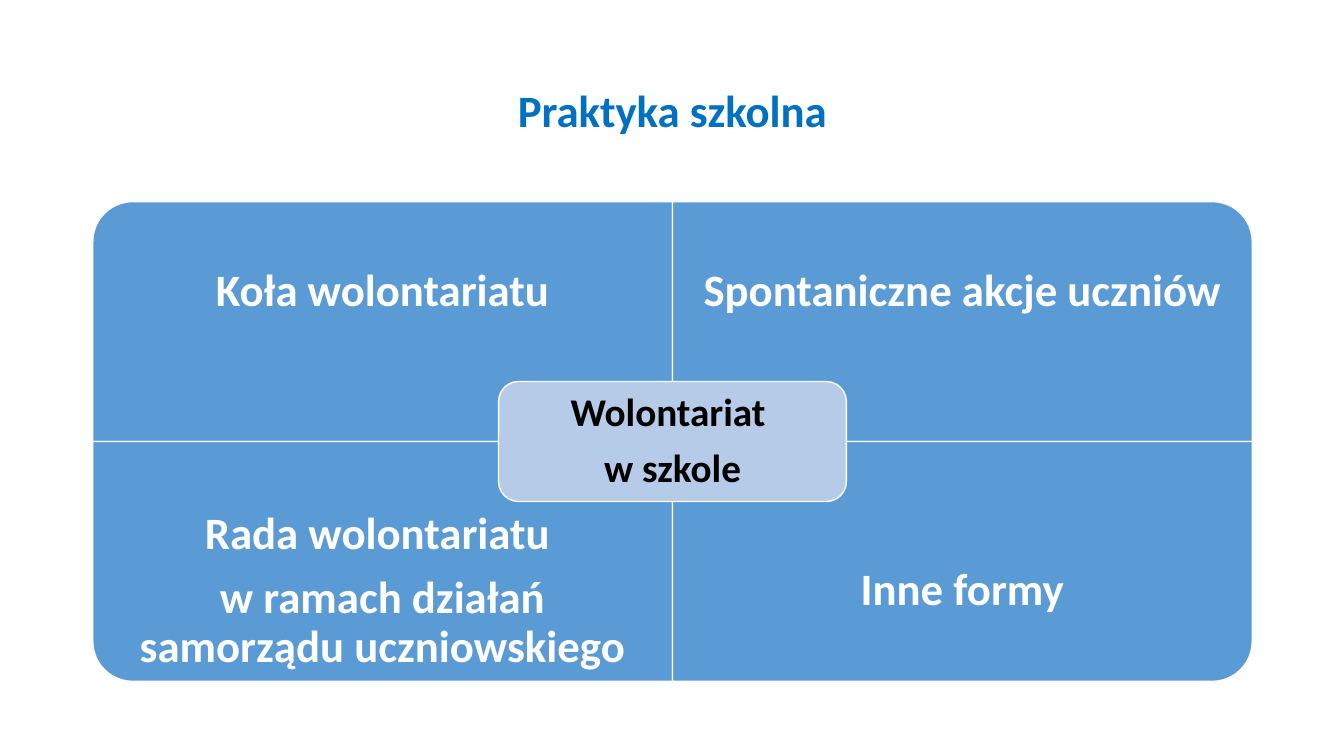
from dataclasses import dataclass
from pptx import Presentation
from pptx.dml.color import RGBColor
from pptx.enum.shapes import MSO_SHAPE
from pptx.enum.text import MSO_ANCHOR, PP_ALIGN
from pptx.util import Inches, Pt

# Content: quadrants hold column, row, turn of the round corner, lines
TITLE = ["Praktyka szkolna"]
QUADS = [
    (0, 0, 270, ["Koła wolontariatu"]),
    (1, 0, 0, ["Spontaniczne akcje uczniów"]),
    (0, 1, 180, ["Rada wolontariatu ", "w ramach działań samorządu uczniowskiego"]),
    (1, 1, 90, ["Inne formy"]),
]
CORE = ["Wolontariat ", "w szkole"]


@dataclass
class Theme:
    font: str = "Calibri"
    title: str = "0070C0"
    quad: str = "5B9BD5"
    core: str = "B5CBE7"
    light: str = "FFFFFF"
    dark: str = "000000"
    big: int = 32
    mid: int = 28
    line: int = 1


THEME = Theme()

# Grid: two by two cells, core box in the middle
WIDE, HIGH = 13.33, 7.5
LEFT, TOP = 0.92, 2
COL, ROW = 5.75, 2.38
CORE_W, CORE_H = COL * 0.6, ROW / 2
TEXT_H = ROW * 0.75

deck = Presentation()
deck.slide_width, deck.slide_height = Inches(WIDE), Inches(HIGH)
slide = deck.slides.add_slide(deck.slide_layouts[6])


def add_text(lines, box, color=THEME.light, size=THEME.big, inset=0.25):
    frame = slide.shapes.add_textbox(*map(Inches, box)).text_frame
    frame.word_wrap = True
    frame.vertical_anchor = MSO_ANCHOR.MIDDLE
    frame.margin_left = frame.margin_right = Inches(inset)
    frame.margin_top = frame.margin_bottom = Inches(inset)
    for i, line in enumerate(lines):
        para = frame.add_paragraph() if i else frame.paragraphs[0]
        para.alignment = PP_ALIGN.CENTER
        para.line_spacing = 0.9
        para.space_after = Pt(round(size * 0.35) if i < len(lines) - 1 else 0)
        run = para.add_run()
        run.text = line
        run.font.name, run.font.size, run.font.bold = THEME.font, Pt(size), True
        run.font.color.rgb = RGBColor.from_string(color)


def add_box(kind, mid_x, mid_y, wide, high, fill, turn=0):
    box = (mid_x - wide / 2, mid_y - high / 2, wide, high)
    shape = slide.shapes.add_shape(kind, *map(Inches, box))
    shape.rotation = turn
    shape.shadow.inherit = False
    shape.fill.solid()
    shape.fill.fore_color.rgb = RGBColor.from_string(fill)
    shape.line.color.rgb = RGBColor.from_string(THEME.light)
    shape.line.width = Pt(THEME.line)


# Title
add_text(TITLE, (LEFT, 0.4, 2 * COL, 1.45), color=THEME.title, inset=0.1)

# Quadrants: a quarter turn swaps width and height
for col, row, turn, lines in QUADS:
    x, y = LEFT + col * COL, TOP + row * ROW
    size = (ROW, COL) if turn % 180 else (COL, ROW)
    add_box(MSO_SHAPE.ROUND_1_RECTANGLE, x + COL / 2, y + ROW / 2, *size,
            THEME.quad, turn)
    add_text(lines, (x, y + row * (ROW - TEXT_H), COL, TEXT_H))

# Core
mid_x, mid_y = LEFT + COL, TOP + ROW
add_box(MSO_SHAPE.ROUNDED_RECTANGLE, mid_x, mid_y, CORE_W, CORE_H, THEME.core)
add_text(CORE, (mid_x - CORE_W / 2, mid_y - CORE_H / 2, CORE_W, CORE_H),
         color=THEME.dark, size=THEME.mid, inset=0.18)

deck.save("out.pptx")
